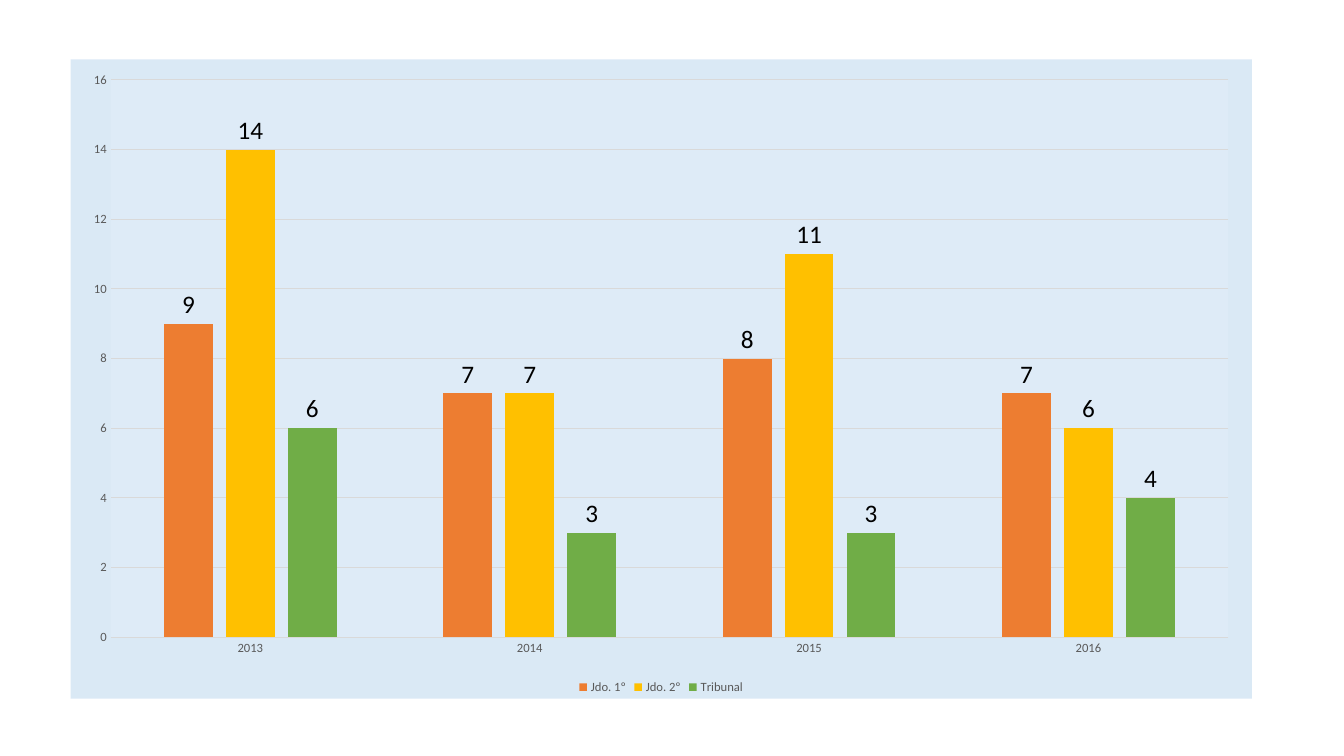
"""Build a slide with a column chart of cases per court and year."""
from lxml import etree
from pptx import Presentation
from pptx.chart.data import CategoryChartData as Data
from pptx.dml.color import RGBColor
from pptx.enum.chart import XL_CHART_TYPE as Kind
from pptx.enum.chart import XL_LABEL_POSITION as Spot
from pptx.enum.chart import XL_LEGEND_POSITION as Side
from pptx.enum.chart import XL_TICK_MARK as Tick
from pptx.oxml import parse_xml
from pptx.oxml.ns import nsdecls, qn
from pptx.util import Pt

BLACK = RGBColor(0x00, 0x00, 0x00)
GRAY = RGBColor(0x59, 0x59, 0x59)
RULE = RGBColor(0xD9, 0xD9, 0xD9)
BLUE = RGBColor(0x5B, 0x9B, 0xD5)
PALE = RGBColor(0xDE, 0xEB, 0xF7)
ORANGE = RGBColor(0xED, 0x7D, 0x31)
GOLD = RGBColor(0xFF, 0xC0, 0x00)
GREEN = RGBColor(0x70, 0xAD, 0x47)

FACE = "Calibri"
YEARS = ["2013", "2014", "2015", "2016"]
COURTS = [
    ("Jdo. 1º", (9, 7, 8, 7), ORANGE),
    ("Jdo. 2º", (14, 7, 11, 6), GOLD),
    ("Tribunal", (6, 3, 3, 4), GREEN),
]
INNER = {"x": 0.034, "y": 0.032, "w": 0.946, "h": 0.872}


def set_font(font, size, color):
    """Give a chart font its face, size and colour."""
    font.name = FACE
    font.size = Pt(size)
    font.bold = False
    font.color.rgb = color


def set_line(line, color):
    """Draw a thin rule in the given colour."""
    line.color.rgb = color
    line.width = Pt(0.75)


def make_fill(color, alpha=100):
    """Return chart shape properties with a solid fill and no outline."""
    return parse_xml(
        f'<c:spPr {nsdecls("c", "a")}><a:solidFill><a:srgbClr val="{color}">'
        f'<a:alpha val="{alpha * 1000}"/></a:srgbClr></a:solidFill>'
        "<a:ln><a:noFill/></a:ln></c:spPr>"
    )


def set_area(chart):
    """Fill the chart and plot areas and place the inner plot."""
    root = chart.element.find(qn("c:chart"))
    root.addnext(make_fill(BLUE, 22))
    plot = root.find(qn("c:plotArea"))
    plot.append(make_fill(PALE))
    for old in plot.findall(qn("c:layout")):
        plot.remove(old)
    layout = etree.Element(qn("c:layout"))
    manual = etree.SubElement(layout, qn("c:manualLayout"))
    modes = {"layoutTarget": "inner", "xMode": "edge", "yMode": "edge"}
    for tag, val in {**modes, **INNER}.items():
        etree.SubElement(manual, qn(f"c:{tag}")).set("val", str(val))
    plot.insert(0, layout)


def set_axes(chart):
    """Format both axes and the grid."""
    years, cases = chart.category_axis, chart.value_axis
    for axis in (years, cases):
        axis.major_tick_mark = axis.minor_tick_mark = Tick.NONE
        set_font(axis.tick_labels.font, 9, GRAY)
    set_line(years.format.line, RULE)
    cases.format.line.fill.background()
    cases.minimum_scale, cases.maximum_scale = 0, 16
    cases.major_unit = 2
    cases.has_major_gridlines = True
    set_line(cases.major_gridlines.format.line, RULE)


def set_bars(plot):
    """Space and colour the columns and label their values."""
    plot.gap_width, plot.overlap = 219, -27
    plot.vary_by_categories = False
    for court, (_, _, color) in zip(plot.series, COURTS):
        court.format.fill.solid()
        court.format.fill.fore_color.rgb = color
        court.invert_if_negative = False
        labels = court.data_labels
        labels.show_value = True
        labels.position = Spot.OUTSIDE_END
        set_font(labels.font, 18, BLACK)


def add_bars(slide):
    """Add the column chart with its legend."""
    data = Data()
    data.categories = YEARS
    for name, vals, _ in COURTS:
        data.add_series(name, vals)
    chart = slide.shapes.add_chart(
        Kind.COLUMN_CLUSTERED, Pt(50.4), Pt(42.5), Pt(843.8), Pt(456.5), data
    ).chart
    set_font(chart.font, 10, BLACK)
    chart.has_title = False
    chart.has_legend = True
    chart.legend.position = Side.BOTTOM
    chart.legend.include_in_layout = False
    set_font(chart.legend.font, 9, GRAY)
    set_axes(chart)
    set_bars(chart.plots[0])
    set_area(chart)


def main():
    """Build and save the deck."""
    deck = Presentation()
    deck.slide_width, deck.slide_height = Pt(960), Pt(540)
    add_bars(deck.slides.add_slide(deck.slide_layouts[6]))
    deck.save("out.pptx")


if __name__ == "__main__":
    main()
